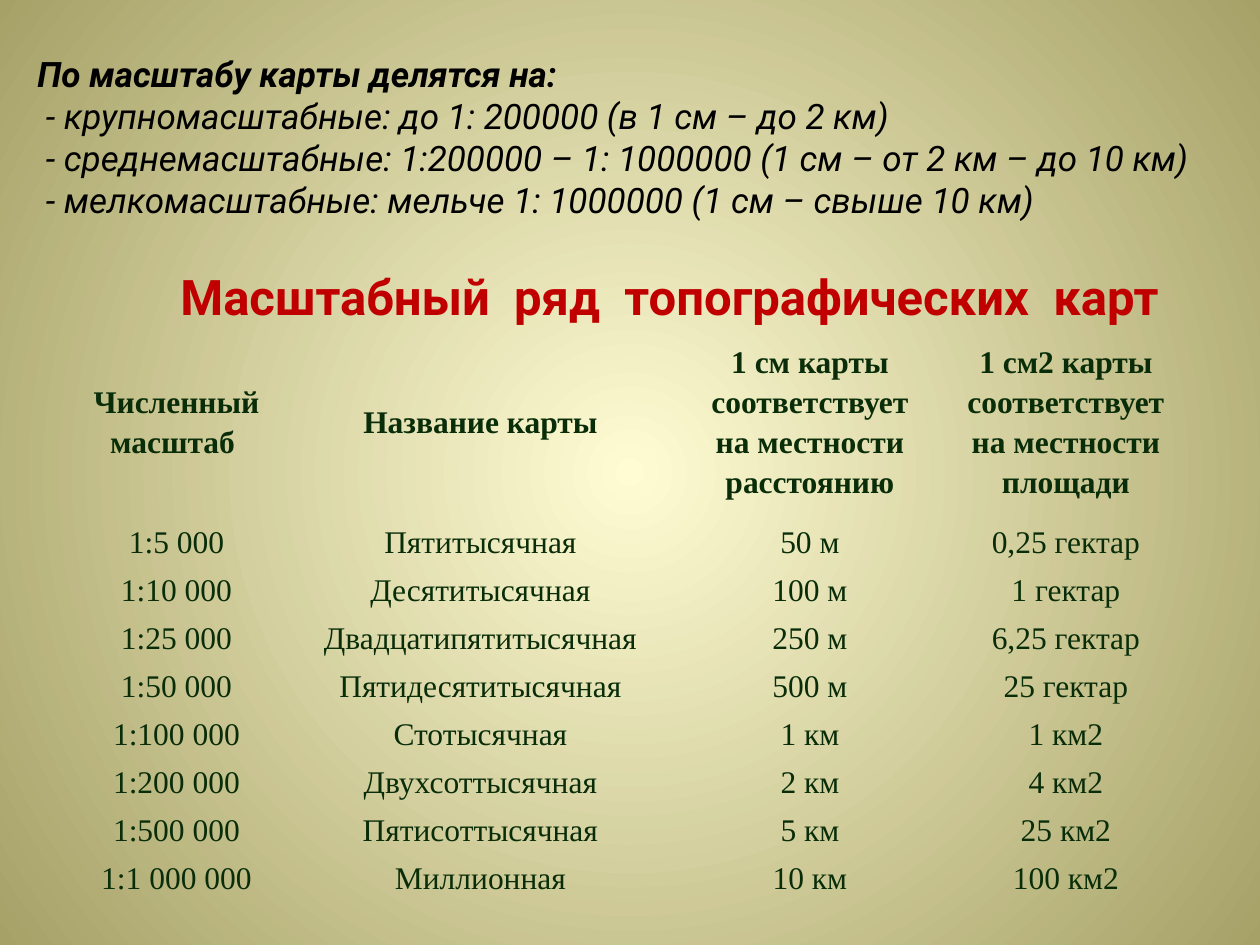
from dataclasses import dataclass

import pptx
import pptx.dml.color
import pptx.enum.text
import pptx.oxml.ns
import pptx.util
from lxml import etree

RGBColor = pptx.dml.color.RGBColor
BLACK = RGBColor(0x00, 0x00, 0x00)
RED = RGBColor(0xC0, 0x00, 0x00)
DARK_GREEN = RGBColor(0x09, 0x2D, 0x08)
GLOW = RGBColor(0xFF, 0xFC, 0xD4)
OLIVE = RGBColor(0xA6, 0xA1, 0x67)

EMU_PER_PX = 914400 / 126
NO_STYLE_NO_GRID = "{2D5ABB26-0587-4C30-8999-92F81FD0307C}"
CENTER = pptx.enum.text.PP_ALIGN.CENTER
LEFT = pptx.enum.text.PP_ALIGN.LEFT


@dataclass(frozen=True)
class Box:
    left: int
    top: int
    width: int
    height: int


@dataclass(frozen=True)
class Style:
    font: str
    size: int
    color: RGBColor
    bold: bool = False
    italic: bool = False


INTRO_LEAD = Style("Roboto", 20, BLACK, bold=True, italic=True)
INTRO = Style("Roboto", 20, BLACK, italic=True)
HEADING = Style("Roboto", 28, RED, bold=True)
HEADER_CELL = Style("Times New Roman", 18, DARK_GREEN, bold=True)
BODY_CELL = Style("Times New Roman", 18, DARK_GREEN)

INTRO_LINES = [
    ("По масштабу карты делятся на:", INTRO_LEAD),
    (" - крупномасштабные: до 1: 200000 (в 1 см – до 2 км)", INTRO),
    (" - среднемасштабные: 1:200000 – 1: 1000000 (1 см – от 2 км – до 10 км)", INTRO),
    (" - мелкомасштабные: мельче 1: 1000000 (1 см – свыше 10 км)", INTRO),
]
HEADING_LINES = [("Масштабный  ряд  топографических  карт", HEADING)]

COLUMN_WIDTHS = [205, 403, 256, 256]
HEADER_HEIGHT, ROW_HEIGHT = 192, 48
SCALE_ROWS = [
    ("Численный масштаб ", "Название карты",
     "1 см карты соответствует\nна местности расстоянию",
     "1 см2 карты соответствует\nна местности площади"),
    ("1:5 000", "Пятитысячная", "50 м", "0,25 гектар"),
    ("1:10 000", "Десятитысячная", "100 м", "1 гектар"),
    ("1:25 000", "Двадцатипятитысячная", "250 м", "6,25 гектар"),
    ("1:50 000", "Пятидесятитысячная", "500 м", "25 гектар"),
    ("1:100 000", "Стотысячная", "1 км", "1 км2"),
    ("1:200 000", "Двухсоттысячная", "2 км", "4 км2"),
    ("1:500 000", "Пятисоттысячная", "5 км", "25 км2"),
    ("1:1 000 000", "Миллионная", "10 км", "100 км2"),
]


def px(length: int) -> int:
    return pptx.util.Emu(round(length * EMU_PER_PX))


def place(box: Box) -> tuple:
    return px(box.left), px(box.top), px(box.width), px(box.height)


def add_lines(paragraph, lines: list) -> None:
    """Add each (text, style) line as a run, with line breaks between them."""
    for index, (text, style) in enumerate(lines):
        if index:
            paragraph.add_line_break()
        run = paragraph.add_run()
        run.text = text
        run.font.name = style.font
        run.font.size = pptx.util.Pt(style.size)
        run.font.bold = style.bold
        run.font.italic = style.italic
        run.font.color.rgb = style.color


def add_text(slide, box: Box, lines: list, alignment, top_inset: int) -> None:
    frame = slide.shapes.add_textbox(*place(box)).text_frame
    frame.word_wrap = True
    frame.margin_top = px(top_inset)
    paragraph = frame.paragraphs[0]
    paragraph.alignment = alignment
    add_lines(paragraph, lines)


def fill_cell(cell, text: str, style: Style) -> None:
    cell.fill.background()
    cell.margin_left = cell.margin_right = cell.margin_top = cell.margin_bottom = 0
    cell.vertical_anchor = pptx.enum.text.MSO_ANCHOR.MIDDLE
    paragraph = cell.text_frame.paragraphs[0]
    paragraph.alignment = CENTER
    paragraph.line_spacing = 1.15
    paragraph.space_after = pptx.util.Pt(10)
    add_lines(paragraph, [(line, style) for line in text.split("\n")])


def add_scale_table(slide, left: int, top: int) -> None:
    height = HEADER_HEIGHT + ROW_HEIGHT * (len(SCALE_ROWS) - 1)
    box = Box(left, top, sum(COLUMN_WIDTHS), height)
    shape = slide.shapes.add_table(len(SCALE_ROWS), len(COLUMN_WIDTHS), *place(box))
    table = shape.table
    table.first_row = table.horz_banding = False
    style_id = shape.element.find(".//" + pptx.oxml.ns.qn("a:tableStyleId"))
    style_id.text = NO_STYLE_NO_GRID
    for column, width in zip(table.columns, COLUMN_WIDTHS):
        column.width = px(width)
    for row_index, texts in enumerate(SCALE_ROWS):
        table.rows[row_index].height = px(ROW_HEIGHT if row_index else HEADER_HEIGHT)
        style = BODY_CELL if row_index else HEADER_CELL
        for column_index, text in enumerate(texts):
            fill_cell(table.cell(row_index, column_index), text, style)


def set_radial_background(slide, center: RGBColor, edge: RGBColor) -> None:
    qn = pptx.oxml.ns.qn
    fill = slide.background.fill
    fill.gradient()
    for stop, color in zip(fill.gradient_stops, (center, edge)):
        stop.color.rgb = color
    gradient = slide.element.find(".//" + qn("a:gradFill"))
    linear = gradient.find(qn("a:lin"))
    circle = etree.Element(qn("a:path"), {"path": "circle"})
    etree.SubElement(circle, qn("a:fillToRect"),
                     {side: "50000" for side in ("l", "t", "r", "b")})
    gradient.replace(linear, circle)


def main() -> None:
    presentation = pptx.Presentation()
    presentation.slide_width, presentation.slide_height = px(1260), px(945)
    slide = presentation.slides.add_slide(presentation.slide_layouts[6])
    set_radial_background(slide, GLOW, OLIVE)

    # Kinds of maps by scale
    add_text(slide, Box(25, 52, 1221, 198), INTRO_LINES, LEFT, top_inset=0)
    # Table of scales
    add_scale_table(slide, 74, 324)
    # Heading above the table
    add_text(slide, Box(134, 260, 1071, 157), HEADING_LINES, CENTER, top_inset=6)

    presentation.save("out.pptx")


if __name__ == "__main__":
    main()
